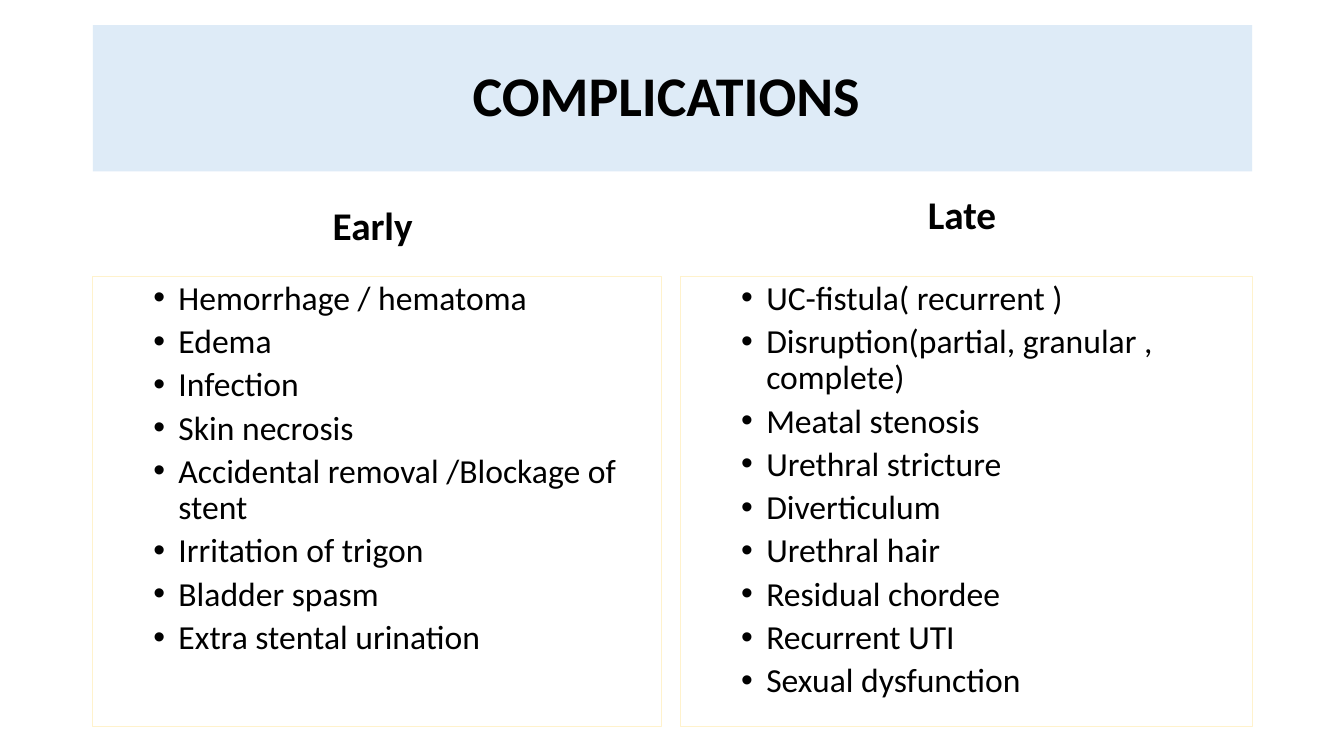
from lxml import etree
from pptx import Presentation
from pptx.dml.color import RGBColor
from pptx.enum.text import MSO_ANCHOR, MSO_AUTO_SIZE, PP_ALIGN
from pptx.oxml.ns import qn
from pptx.util import Inches, Pt

TITLE = "COMPLICATIONS "
COLUMNS = [
    {
        "heading": "Early ", "left": 0.92, "width": 5.64, "heading_top": 1.62,
        "items": [
            "Hemorrhage / hematoma",
            "Edema",
            "Infection",
            "Skin necrosis",
            "Accidental removal /Blockage of stent",
            "Irritation of trigon",
            "Bladder spasm",
            "Extra stental urination",
        ],
    },
    {
        "heading": "Late ", "left": 6.75, "width": 5.67, "heading_top": 1.51,
        "items": [
            "UC-fistula( recurrent )",
            "Disruption(partial, granular , complete)",
            "Meatal stenosis",
            "Urethral stricture",
            "Diverticulum",
            "Urethral hair",
            "Residual chordee",
            "Recurrent UTI",
            "Sexual dysfunction",
        ],
    },
]

FONT = "Calibri"
BLACK = RGBColor(0x00, 0x00, 0x00)
PALE_BLUE = RGBColor(0xDE, 0xEB, 0xF7)
PALE_YELLOW = RGBColor(0xFF, 0xF2, 0xCC)
CENTER, LEFT = PP_ALIGN.CENTER, PP_ALIGN.LEFT
TOP, MIDDLE, BOTTOM = MSO_ANCHOR.TOP, MSO_ANCHOR.MIDDLE, MSO_ANCHOR.BOTTOM
NO_AUTOFIT = MSO_AUTO_SIZE.NONE
COMPARISON_LAYOUT = 4


def add_bullet(paragraph):
    properties = paragraph._p.get_or_add_pPr()
    properties.set("marL", str(Inches(0.75)))
    properties.set("indent", str(Inches(-0.25)))
    etree.SubElement(properties, qn("a:buFont")).set("typeface", "Arial")
    etree.SubElement(properties, qn("a:buChar")).set("char", "•")


def write(shape, lines, box, size, bold=False, align=CENTER, anchor=MIDDLE,
          bulleted=False, space=0):
    shape.left, shape.top, shape.width, shape.height = map(Inches, box)
    frame = shape.text_frame
    frame.word_wrap = True
    frame.auto_size = NO_AUTOFIT
    frame.vertical_anchor = anchor
    for index, line in enumerate(lines):
        paragraph = frame.add_paragraph() if index else frame.paragraphs[0]
        if bulleted:
            paragraph.level = 1
            add_bullet(paragraph)
        paragraph.alignment = align
        paragraph.line_spacing = 0.9
        paragraph.space_before = Pt(space if index else 0)
        run = paragraph.add_run()
        run.text = line
        run.font.name = FONT
        run.font.size = Pt(size)
        run.font.bold = bold
        run.font.color.rgb = BLACK


def main():
    presentation = Presentation()
    presentation.slide_width = Inches(13.33)
    presentation.slide_height = Inches(7.5)
    slide = presentation.slides.add_slide(presentation.slide_layouts[COMPARISON_LAYOUT])
    title, *bodies = slide.placeholders

    write(title, [TITLE], (0.92, 0.25, 11.5, 1.45), 40, bold=True)
    title.fill.solid()
    title.fill.fore_color.rgb = PALE_BLUE

    for column, heading, listing in zip(COLUMNS, bodies[::2], bodies[1::2]):
        left, width = column["left"], column["width"]
        write(heading, [column["heading"]], (left, column["heading_top"], width, 0.9),
              28, bold=True, anchor=BOTTOM)
        write(listing, column["items"], (left, 2.74, width, 4.47), 24,
              align=LEFT, anchor=TOP, bulleted=True, space=5)
        listing.line.color.rgb = PALE_YELLOW
        listing.line.width = Pt(0.75)

    presentation.save("out.pptx")


if __name__ == "__main__":
    main()
